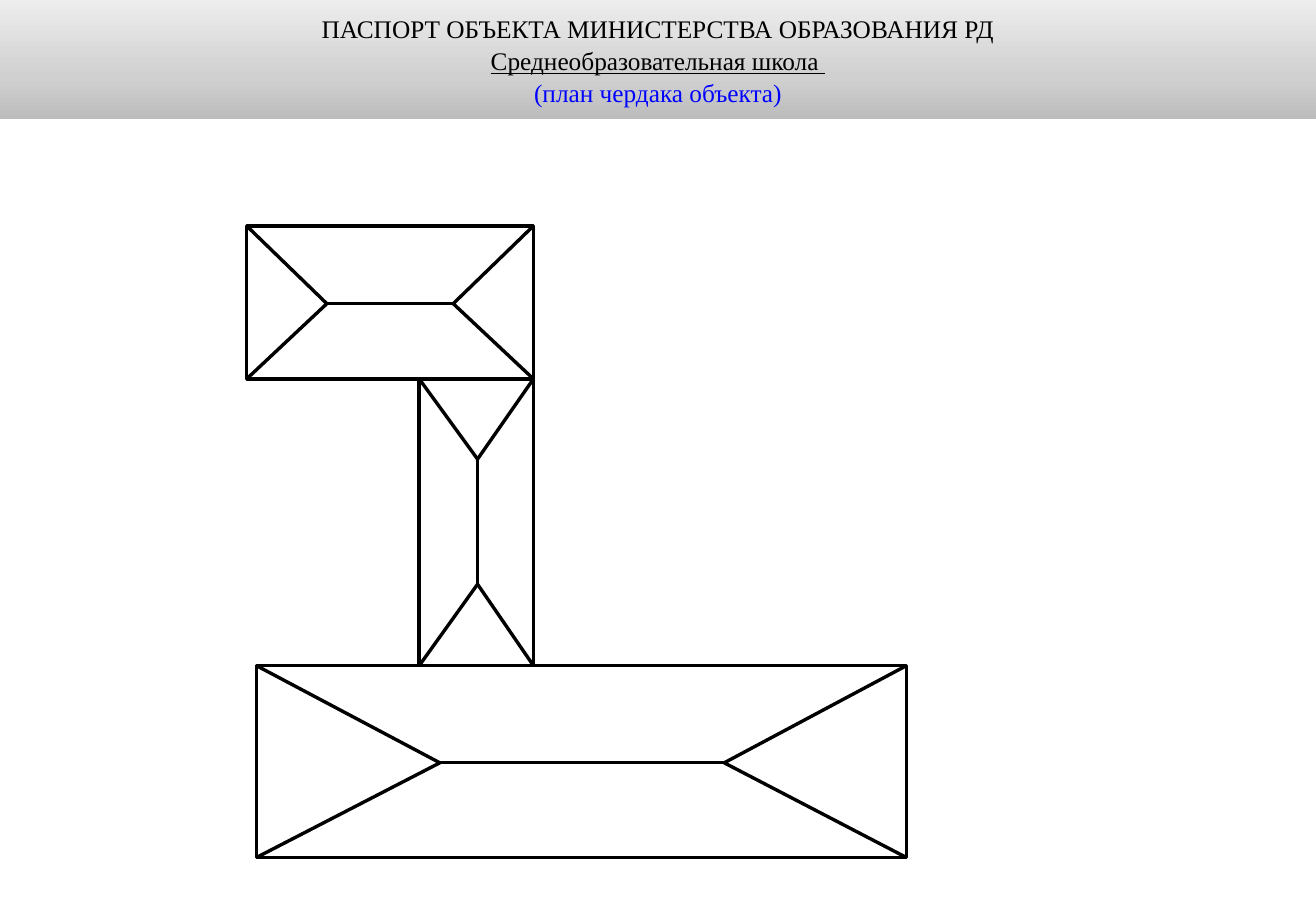
from copy import deepcopy

from pptx import Presentation
from pptx.dml.color import RGBColor as RGB
from pptx.enum.shapes import MSO_CONNECTOR as LINK, MSO_SHAPE as SHAPE
from pptx.enum.text import MSO_ANCHOR as ANCHOR, PP_ALIGN as ALIGN
from pptx.oxml.ns import qn
from pptx.oxml.xmlchemy import OxmlElement as Node
from pptx.util import Pt

SCALE = 9144
BLACK = RGB(0, 0, 0)
WHITE = RGB(255, 255, 255)
BLUE = RGB(0, 0, 255)
SHADES = [(0, RGB(0xBC, 0xBC, 0xBC)), (0.35, RGB(0xD0, 0xD0, 0xD0)),
          (1, RGB(0xED, 0xED, 0xED))]
FONT = {"name": "Times New Roman", "size": Pt(15)}
INSET = {"margin_left": 9, "margin_right": 9, "margin_top": 5, "margin_bottom": 5}

TITLE = [
    ("ПАСПОРТ ОБЪЕКТА МИНИСТЕРСТВА ОБРАЗОВАНИЯ РД", BLACK, False),
    ("Среднеобразовательная школа ", BLACK, True),
    ("(план чердака объекта)", BLUE, False),
]
ROOFS = [
    ((211, 548, 535, 158), (362, 628), (596, 628)),
    ((345, 312, 94, 236), (393, 378), (393, 481)),
    ((203, 186, 236, 126), (269, 250), (373, 250)),
]


def px(*nums):
    """Turn px lengths into EMU."""
    return [num * SCALE for num in nums]


class Plan:
    """Holds the line style and the current slide."""

    def __init__(self, deck):
        self.slide = deck.slides.add_slide(deck.slide_layouts[5])
        self.ink, self.width = BLACK, Pt(2)

    def stroke(self, item):
        item.line.color.rgb = self.ink
        item.line.width = self.width

    def title(self, box, rows):
        head = self.slide.shapes.title
        head.left, head.top, head.width, head.height = px(*box)
        self.shade(head)
        frame = head.text_frame
        frame.word_wrap = True
        frame.vertical_anchor = ANCHOR.MIDDLE
        for key, num in INSET.items():
            setattr(frame, key, num * SCALE)
        for num, (text, color, under) in enumerate(rows):
            para = frame.add_paragraph() if num else frame.paragraphs[0]
            para.alignment = ALIGN.CENTER
            para.line_spacing = 1.05
            run = para.add_run()
            run.text = text
            for key, value in {**FONT, "underline": under}.items():
                setattr(run.font, key, value)
            run.font.color.rgb = color

    def shade(self, item):
        item.fill.gradient()
        item.fill.gradient_angle = 90
        stops = next(item._element.iter(qn("a:gsLst")))
        stops.append(deepcopy(stops[0]))
        for stop, (pos, color) in zip(item.fill.gradient_stops, SHADES):
            stop.position = pos
            stop.color.rgb = color

    def rect(self, group, box):
        item = group.shapes.add_shape(SHAPE.RECTANGLE, *px(*box))
        item.shadow.inherit = False
        item.fill.solid()
        item.fill.fore_color.rgb = WHITE
        self.stroke(item)

    def line(self, group, start, end):
        item = group.shapes.add_connector(LINK.STRAIGHT, *px(*start, *end))
        self.stroke(item)
        item._element.spPr.append(Node("a:effectLst"))

    def roof(self, box, start, end):
        left, top, wide, high = box
        group = self.slide.shapes.add_group_shape()
        self.rect(group, box)
        self.line(group, start, end)
        for x in (left, left + wide):
            for y in (top, top + high):
                far = x > left if wide > high else y > top
                self.line(group, (x, y), end if far else start)


def main():
    deck = Presentation()
    deck.slide_width, deck.slide_height = px(1083, 750)
    plan = Plan(deck)
    plan.title((0, 0, 1083, 98), TITLE)
    for roof in ROOFS:
        plan.roof(*roof)
    deck.save("out.pptx")


if __name__ == "__main__":
    main()
